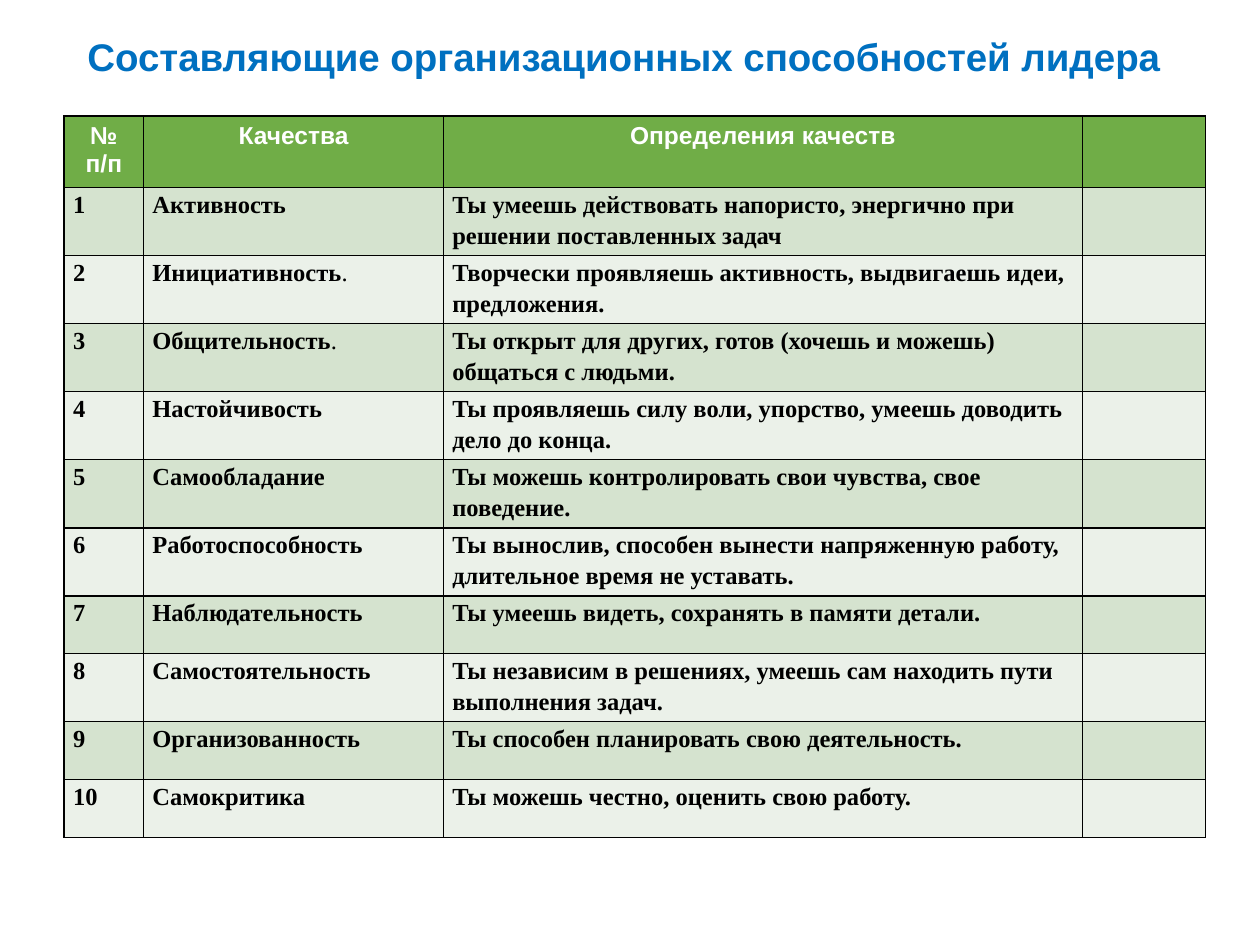
from typing import NamedTuple

from lxml.etree import SubElement
from pptx import Presentation
from pptx.dml.color import RGBColor
from pptx.enum.text import MSO_AUTO_SIZE, PP_ALIGN
from pptx.oxml.ns import qn
from pptx.slide import Slide
from pptx.table import _Cell as Cell
from pptx.text.text import _Paragraph as Paragraph
from pptx.util import Inches, Pt

BLUE = RGBColor(0x00, 0x70, 0xC0)
GREEN = RGBColor(0x70, 0xAD, 0x47)
DARK_BAND = RGBColor(0xD5, 0xE3, 0xCF)
LIGHT_BAND = RGBColor(0xEB, 0xF1, 0xE9)
WHITE = RGBColor(0xFF, 0xFF, 0xFF)
BLACK = RGBColor(0x00, 0x00, 0x00)

TITLE = "Составляющие организационных способностей лидера "
HEADINGS = ("№\nп/п", "Качества", "Определения качеств", "")
COLUMN_WIDTHS = (0.63, 2.38, 5.07, 0.98)
HEADER_HEIGHT = 0.57


class Quality(NamedTuple):
    name: str
    definition: str
    ending: str = ""  # set in regular weight after the bold name
    height: float = 0.54


QUALITIES = (
    Quality("Активность", "Ты умеешь действовать напористо, энергично при решении поставленных задач"),
    Quality("Инициативность", "Творчески проявляешь активность, выдвигаешь идеи, предложения.", "."),
    Quality("Общительность", "Ты открыт для других, готов (хочешь и можешь) общаться с людьми.", "."),
    Quality("Настойчивость", "Ты проявляешь силу воли, упорство, умеешь доводить дело до конца."),
    Quality("Самообладание", "Ты можешь контролировать свои чувства, свое поведение."),
    Quality("Работоспособность", "Ты вынослив, способен вынести напряженную работу, длительное время не уставать."),
    Quality("Наблюдательность", "Ты умеешь видеть, сохранять в памяти детали.", height=0.46),
    Quality("Самостоятельность", "Ты независим в решениях, умеешь сам находить пути выполнения задач."),
    Quality("Организованность", "Ты способен планировать свою деятельность.", height=0.46),
    Quality("Самокритика", "Ты можешь честно, оценить свою работу.", height=0.46),
)


def format_runs(paragraph: Paragraph, font_name: str, size: float, color: RGBColor) -> None:
    for run in paragraph.runs:
        run.font.name = font_name
        run.font.size = Pt(size)
        run.font.bold = True
        run.font.color.rgb = color


def style_cell(cell: Cell, color: RGBColor) -> None:
    """Fill the cell and give it a thin black border on all sides."""
    properties = cell._tc.get_or_add_tcPr()
    for side in ("a:lnL", "a:lnR", "a:lnT", "a:lnB"):
        line = SubElement(properties, qn(side), w=str(Pt(1)))
        line_fill = SubElement(line, qn("a:solidFill"))
        SubElement(line_fill, qn("a:srgbClr"), val=str(BLACK))
    cell.fill.solid()
    cell.fill.fore_color.rgb = color


def write_heading(cell: Cell, text: str) -> None:
    style_cell(cell, GREEN)
    cell.text_frame.text = text
    for paragraph in cell.text_frame.paragraphs:
        paragraph.alignment = PP_ALIGN.CENTER
        format_runs(paragraph, "Arial", 14, WHITE)


def write_body(cell: Cell, text: str, ending: str = "") -> None:
    cell.margin_left = cell.margin_right = Inches(0.07)
    cell.margin_top = cell.margin_bottom = Inches(0)
    cell.text_frame.text = text
    paragraph = cell.text_frame.paragraphs[0]
    paragraph.line_spacing = 1.15
    paragraph.space_after = Pt(10)
    if ending:
        paragraph.add_run().text = ending
    format_runs(paragraph, "Times New Roman", 14, BLACK)
    if ending:
        paragraph.runs[-1].font.bold = False


def add_title(slide: Slide) -> None:
    title = slide.shapes.add_textbox(Inches(0.23), Inches(0.21), Inches(9.53), Inches(0.47))
    text_frame = title.text_frame
    text_frame.word_wrap = True
    text_frame.auto_size = MSO_AUTO_SIZE.SHAPE_TO_FIT_TEXT
    text_frame.text = TITLE
    paragraph = text_frame.paragraphs[0]
    paragraph.alignment = PP_ALIGN.CENTER
    format_runs(paragraph, "Arial", 22, BLUE)


def add_qualities_table(slide: Slide) -> None:
    heights = [HEADER_HEIGHT, *(quality.height for quality in QUALITIES)]
    table = slide.shapes.add_table(
        len(heights), len(COLUMN_WIDTHS), Inches(0.51), Inches(0.92),
        Inches(sum(COLUMN_WIDTHS)), Inches(sum(heights)),
    ).table
    for column, width in zip(table.columns, COLUMN_WIDTHS):
        column.width = Inches(width)
    for row, height in zip(table.rows, heights):
        row.height = Inches(height)

    for column_index, heading in enumerate(HEADINGS):
        write_heading(table.cell(0, column_index), heading)
    for number, quality in enumerate(QUALITIES, start=1):
        cells = table.rows[number].cells
        for cell in cells:
            style_cell(cell, DARK_BAND if number % 2 else LIGHT_BAND)
        write_body(cells[0], str(number))
        write_body(cells[1], quality.name, quality.ending)
        write_body(cells[2], quality.definition)


def main() -> None:
    presentation = Presentation()
    presentation.slide_width = Inches(10)
    presentation.slide_height = Inches(7.5)
    slide = presentation.slides.add_slide(presentation.slide_layouts[6])
    add_title(slide)
    add_qualities_table(slide)
    presentation.save("out.pptx")


if __name__ == "__main__":
    main()
